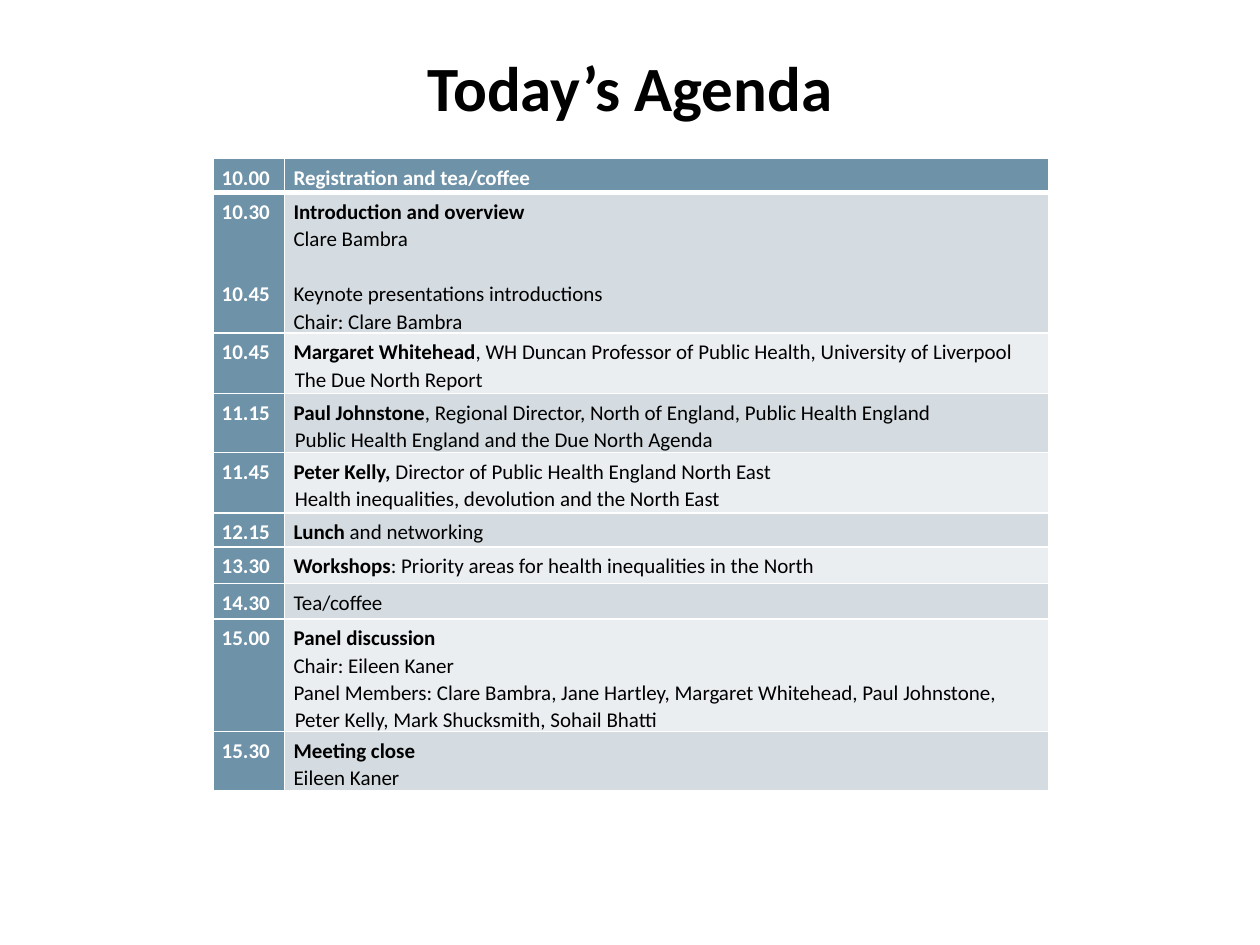
from lxml.etree import SubElement
from pptx import Presentation
from pptx.dml.color import RGBColor
from pptx.enum.text import MSO_ANCHOR as Anchor, PP_ALIGN as Align
from pptx.oxml.ns import qn
from pptx.util import Inches, Pt

BLACK = RGBColor(0x00, 0x00, 0x00)
WHITE = RGBColor(0xFF, 0xFF, 0xFF)
STEEL = RGBColor(0x6E, 0x92, 0xA8)
DARK_BAND = RGBColor(0xD5, 0xDC, 0xE1)
LIGHT_BAND = RGBColor(0xEB, 0xEE, 0xF1)

FONT = "Calibri"
LINE_HEIGHT = 15.7  # points taken by one line of table text

# The slide is a grid of 1000 columns by 750 rows
UNIT = Inches(0.01)
SLIDE_COLUMNS, SLIDE_ROWS = 1000, 750
TITLE_BOX = (50, 30, 900, 77)
TABLE_LEFT, TABLE_TOP = 169, 126
COLUMN_WIDTHS = (57, 606)

# Row height, times and entries. A paragraph is (blank lines before, bold, plain);
# "\v" breaks a line inside a paragraph.
AGENDA = [
    (27, [(0, "10.00", "")], [(0, "Registration and tea/coffee", "")]),
    (106, [(0, "10.30", ""), (2, "10.45", "")],
     [(0, "Introduction and overview", ""),
      (0, "", "Clare Bambra"),
      (1, "", "Keynote presentations introductions"),
      (0, "", "Chair: Clare Bambra")]),
    (48, [(0, "10.45", "")],
     [(0, "Margaret Whitehead",
       ", WH Duncan Professor of Public Health, University of Liverpool"
       "\vThe Due North Report")]),
    (47, [(0, "11.15", "")],
     [(0, "Paul Johnstone",
       ", Regional Director, North of England, Public Health England"
       "\vPublic Health England and the Due North Agenda")]),
    (48, [(0, "11.45", "")],
     [(0, "Peter Kelly, ",
       "Director of Public Health England North East"
       "\vHealth inequalities, devolution and the North East")]),
    (27, [(0, "12.15", "")], [(0, "Lunch ", "and networking")]),
    (29, [(0, "13.30", "")],
     [(0, "Workshops", ": Priority areas for health inequalities in the North")]),
    (28, [(0, "14.30", "")], [(0, "", "Tea/coffee")]),
    (86, [(0, "15.00", "")],
     [(0, "Panel discussion", ""),
      (0, "", "Chair: Eileen Kaner"),
      (0, "", "Panel Members: Clare Bambra, Jane Hartley, Margaret Whitehead, "
              "Paul Johnstone, Peter Kelly, Mark Shucksmith, Sohail Bhatti")]),
    (45, [(0, "15.30", "")],
     [(0, "Meeting close", ""), (0, "", "Eileen Kaner")]),
]


def grid(count):
    return int(count * UNIT)


def add_text(paragraph, text, size=12, color=BLACK, bold=False):
    """Add text to a paragraph, with a line break at each "\v"."""
    for index, line in enumerate(text.split("\v")):
        if index:
            paragraph.add_line_break()
        run = paragraph.add_run()
        run.text = line
        font = run.font
        font.name, font.size, font.bold = FONT, Pt(size), bold
        font.color.rgb = color


def add_title(slide, text):
    box = slide.shapes.add_textbox(*map(grid, TITLE_BOX))
    frame = box.text_frame
    frame.word_wrap = True
    frame.vertical_anchor = Anchor.MIDDLE
    paragraph = frame.paragraphs[0]
    paragraph.alignment = Align.CENTER
    add_text(paragraph, text, size=36, bold=True)


def set_borders(cell, top=1, bottom=1):
    properties = cell._tc.get_or_add_tcPr()
    for side, width in (("L", 1), ("R", 1), ("T", top), ("B", bottom)):
        line = SubElement(properties, qn(f"a:ln{side}"), w=str(Pt(width)))
        fill = SubElement(line, qn("a:solidFill"))
        SubElement(fill, qn("a:srgbClr"), val=str(WHITE))


def fill_cell(cell, paragraphs, fill, color, margin):
    cell.margin_left, cell.margin_right = grid(7), grid(8)
    cell.margin_top, cell.margin_bottom = grid(4), 0
    cell.fill.solid()
    cell.fill.fore_color.rgb = fill
    frame = cell.text_frame
    for index, (blank_lines, bold_text, plain_text) in enumerate(paragraphs):
        paragraph = frame.add_paragraph() if index else frame.paragraphs[0]
        paragraph.line_spacing = 1.07
        paragraph.space_before = Pt(blank_lines * LINE_HEIGHT)
        properties = paragraph._p.get_or_add_pPr()
        properties.set("marL", str(grid(margin)))
        properties.set("indent", str(-grid(1)))
        for text, bold in ((bold_text, True), (plain_text, False)):
            if text:
                add_text(paragraph, text, color=color, bold=bold)


def add_agenda(slide):
    heights = [row[0] for row in AGENDA]
    frame = slide.shapes.add_table(
        len(AGENDA), len(COLUMN_WIDTHS), grid(TABLE_LEFT), grid(TABLE_TOP),
        grid(sum(COLUMN_WIDTHS)), grid(sum(heights)))
    table = frame.table
    table.first_row = table.horz_banding = False
    for column, width in zip(table.columns, COLUMN_WIDTHS):
        column.width = grid(width)

    for index, (height, times, entries) in enumerate(AGENDA):
        table.rows[index].height = grid(height)
        time_cell, entry_cell = table.rows[index].cells
        for cell in (time_cell, entry_cell):
            # A thick rule parts the heading row from the rest
            set_borders(cell, top=3 if index == 1 else 1,
                        bottom=3 if index == 0 else 1)
        band = DARK_BAND if index % 2 else LIGHT_BAND
        entry_fill, entry_color = (band, BLACK) if index else (STEEL, WHITE)
        fill_cell(time_cell, times, STEEL, WHITE, margin=0)
        fill_cell(entry_cell, entries, entry_fill, entry_color, margin=1)


def main():
    presentation = Presentation()
    presentation.slide_width = grid(SLIDE_COLUMNS)
    presentation.slide_height = grid(SLIDE_ROWS)
    slide = presentation.slides.add_slide(presentation.slide_layouts[6])
    add_title(slide, "Today’s Agenda")
    add_agenda(slide)
    presentation.save("out.pptx")


if __name__ == "__main__":
    main()
